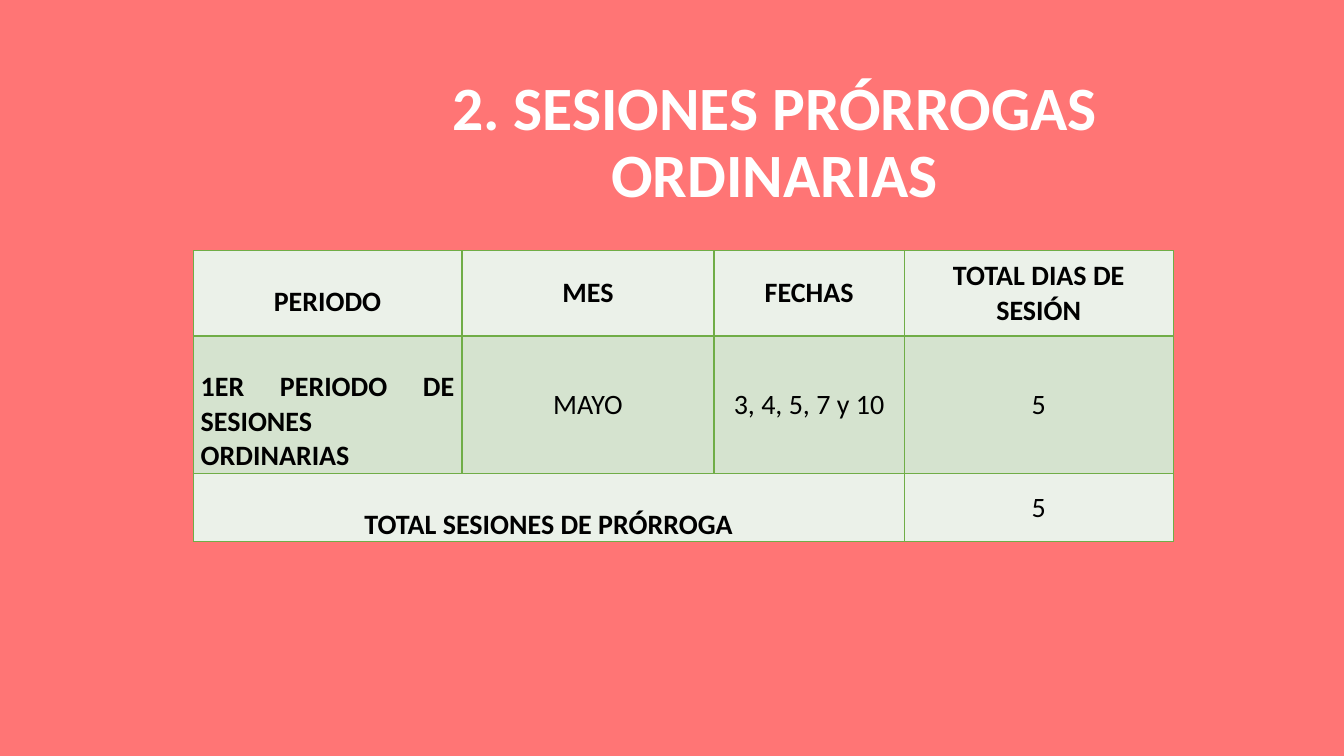
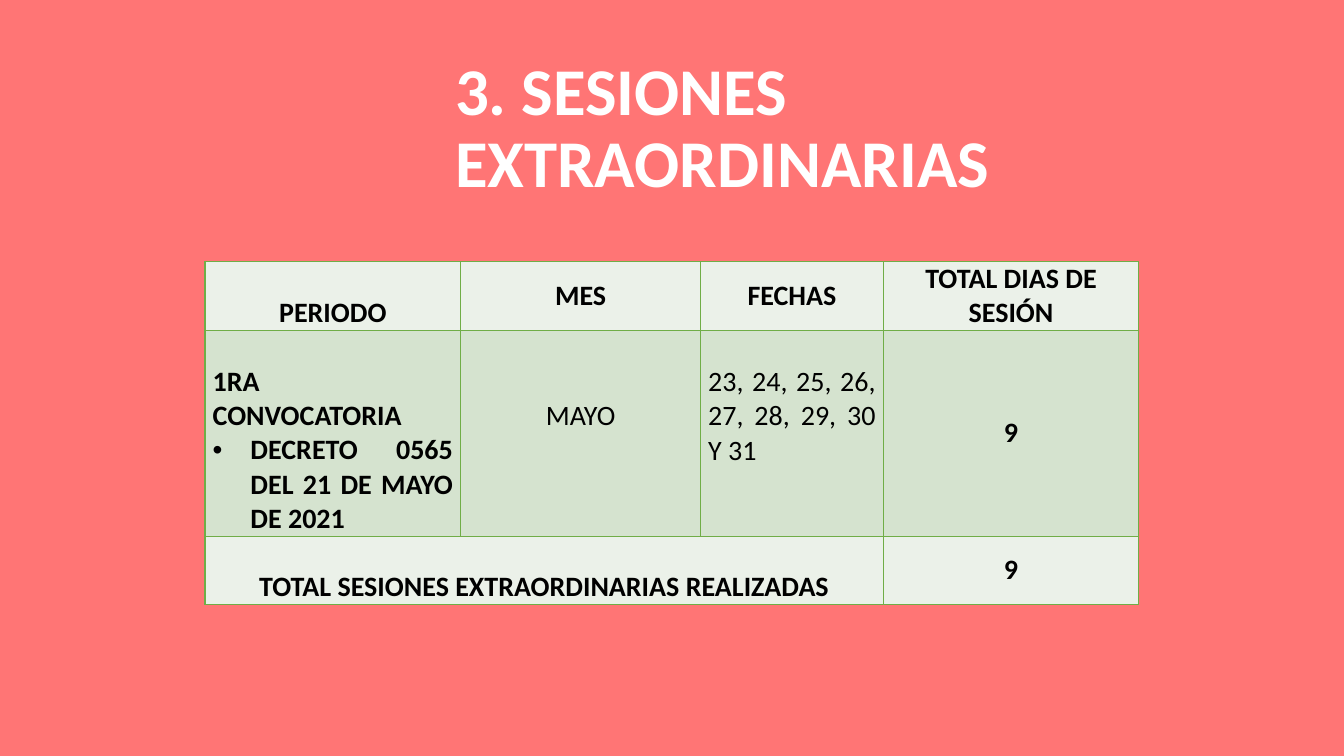
"""Build two slides that tabulate the council's extended and extraordinary sessions."""
import pptx
import pptx.dml.color
import pptx.enum.text
import pptx.oxml
import pptx.oxml.ns
import pptx.util

Pt = pptx.util.Pt
ALIGN = pptx.enum.text.PP_ALIGN
ANCHOR = pptx.enum.text.MSO_ANCHOR

COLORS = {
    "background": "FF7575",
    "title": "FFFFFF",
    "text": "000000",
    "light": "EBF1E9",
    "dark": "D5E3CF",
    "border": "70AD47",
}
FONT = "Calibri"
LINE = 24.4
CELL_SIDE = 5.4
BULLET_INDENT = 27

HEADERS = [
    {"lines": ["PERIODO"], "above": LINE, "bold": True},
    {"lines": ["MES"], "bold": True},
    {"lines": ["FECHAS"], "bold": True},
    {"lines": ["TOTAL DIAS DE SESIÓN"], "bold": True},
]


def rgb(name):
    return pptx.dml.color.RGBColor.from_string(COLORS[name])


def set_values(target, values):
    for name, value in values.items():
        setattr(target, name, value)


def style_font(font, size, color, bold):
    set_values(font, {"name": FONT, "size": Pt(size), "bold": bold})
    font.color.rgb = rgb(color)


def add_page(deck):
    page = deck.slides.add_slide(deck.slide_layouts[6])
    fill = page.background.fill
    fill.solid()
    fill.fore_color.rgb = rgb("background")
    return page


def add_title(page, text, left, top, width, size, alignment):
    box = page.shapes.add_textbox(Pt(left), Pt(top), Pt(width), Pt(104))
    set_values(box.text_frame, {"word_wrap": True, "vertical_anchor": ANCHOR.MIDDLE})
    para = box.text_frame.paragraphs[0]
    para.text = text
    set_values(para, {"alignment": alignment, "line_spacing": 0.9})
    style_font(para.font, size, "title", True)


def add_bullet(para):
    properties = para._p.get_or_add_pPr()
    properties.set("marL", str(Pt(BULLET_INDENT)))
    properties.set("indent", str(-Pt(BULLET_INDENT)))
    for xml in ('<a:buFont {} typeface="Arial"/>', '<a:buChar {} char="•"/>'):
        properties.append(pptx.oxml.parse_xml(xml.format(pptx.oxml.ns.nsdecls("a"))))


def add_borders(cell):
    properties = cell._tc.get_or_add_tcPr()
    for side in ("lnL", "lnR", "lnT", "lnB"):
        properties.append(pptx.oxml.parse_xml(
            f'<a:{side} {pptx.oxml.ns.nsdecls("a")} w="{Pt(1)}"><a:solidFill>'
            f'<a:srgbClr val="{COLORS["border"]}"/></a:solidFill></a:{side}>'))


def fill_cell(cell, content, color):
    add_borders(cell)
    cell.fill.solid()
    cell.fill.fore_color.rgb = rgb(color)
    above = content.get("above", 0)
    set_values(cell, {
        "margin_left": Pt(CELL_SIDE),
        "margin_right": Pt(CELL_SIDE),
        "margin_top": Pt(above),
        "margin_bottom": Pt(content.get("below", 0)),
        "vertical_anchor": ANCHOR.TOP if above else ANCHOR.MIDDLE,
    })
    lines = content["lines"]
    cell.text_frame.text = "\n".join(lines)
    for index, para in enumerate(cell.text_frame.paragraphs):
        para.alignment = content.get("align", ALIGN.CENTER)
        if index > 0:
            add_bullet(para)
        style_font(para.font, 20, "text", content.get("bold", False))


def add_sessions_table(page, left, top, widths, heights, session, total):
    rows = [HEADERS, session, [total[0], {"lines": [""]}, {"lines": [""]}, total[1]]]
    frame = page.shapes.add_table(len(rows), len(widths), Pt(left), Pt(top),
                                  Pt(sum(widths)), Pt(sum(heights)))
    table = frame.table
    set_values(table, {"first_row": False, "horz_banding": False})
    for column, width in zip(table.columns, widths):
        column.width = Pt(width)
    for row_index, (row, height) in enumerate(zip(rows, heights)):
        table.rows[row_index].height = Pt(height)
        color = "dark" if row_index == 1 else "light"
        for column_index, content in enumerate(row):
            fill_cell(table.cell(row_index, column_index), content, color)
    table.cell(2, 0).merge(table.cell(2, 2))


def main():
    deck = pptx.Presentation()
    set_values(deck, {"slide_width": Pt(960), "slide_height": Pt(540)})

    page = add_page(deck)
    add_title(page, "2. SESIONES PRÓRROGAS ORDINARIAS", 269, 51, 569, 44, ALIGN.CENTER)
    add_sessions_table(
        page, 138, 179, [192, 180, 136, 192], [61, 98, 49],
        [
            {"lines": ["1ER PERIODO DE SESIONES ORDINARIAS"], "above": LINE,
             "bold": True, "align": ALIGN.JUSTIFY},
            {"lines": ["MAYO"]},
            {"lines": ["3, 4, 5, 7 y 10"]},
            {"lines": ["5"]},
        ],
        [{"lines": ["TOTAL SESIONES DE PRÓRROGA"], "above": LINE, "bold": True},
         {"lines": ["5"]}])

    page = add_page(deck)
    add_title(page, "3. SESIONES EXTRAORDINARIAS", 318, 41, 575, 47.7, ALIGN.LEFT)
    add_sessions_table(
        page, 146.5, 187, [182.5, 171.5, 130.5, 182.5], [49, 147, 49],
        [
            {"lines": ["1RA CONVOCATORIA", "DECRETO 0565 DEL 21 DE MAYO DE 2021"],
             "above": LINE, "bold": True, "align": ALIGN.JUSTIFY},
            {"lines": ["MAYO"], "below": LINE},
            {"lines": ["23, 24, 25, 26, 27, 28, 29, 30 Y 31"], "below": LINE,
             "align": ALIGN.JUSTIFY},
            {"lines": ["9"], "bold": True},
        ],
        [{"lines": ["TOTAL SESIONES EXTRAORDINARIAS REALIZADAS"], "above": LINE, "bold": True},
         {"lines": ["9"], "bold": True}])

    deck.save("out.pptx")


if __name__ == "__main__":
    main()
